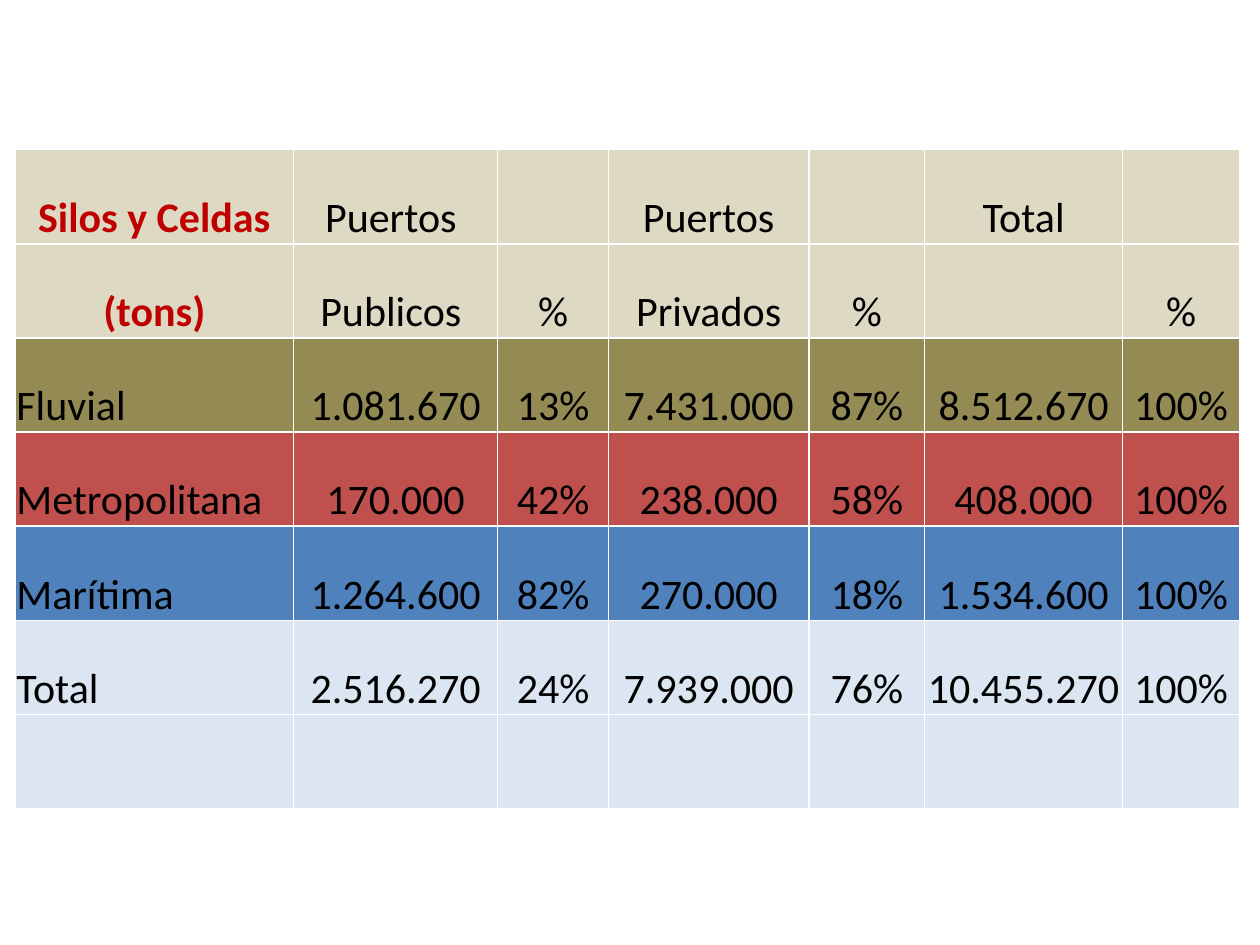
import pptx
import pptx.dml.color
import pptx.enum.text
import pptx.oxml
import pptx.oxml.ns
import pptx.util
from pptx.util import Inches

THEME = {
    "font": "Calibri",
    "size": pptx.util.Pt(24),
    "border_width": pptx.util.Pt(1),
    "white": "FFFFFF",
    "text": "000000",
    "accent": "C00000",
    "header": "DDD9C3",
    "river": "948A54",
    "metropolitan": "C0504D",
    "sea": "4F81BD",
    "total": "DCE6F2",
}
COLUMN_WIDTHS = [2.21, 1.62, 0.88, 1.59, 0.92, 1.57, 0.93]
ROW_HEIGHT = 0.7475
EMPTY_ROW = [""] * len(COLUMN_WIDTHS)
ROWS = [
    ("white", EMPTY_ROW),
    ("header", ["Silos y Celdas", "Puertos ", "", "Puertos", "", "Total", ""]),
    ("header", ["(tons)", "Publicos ", "%", "Privados", "%", "", "%"]),
    ("river", ["Fluvial", "1.081.670", "13%", "7.431.000", "87%", "8.512.670", "100%"]),
    ("metropolitan", ["Metropolitana", "170.000", "42%", "238.000", "58%", "408.000", "100%"]),
    ("sea", ["Marítima", "1.264.600", "82%", "270.000", "18%", "1.534.600", "100%"]),
    ("total", ["Total", "2.516.270", "24%", "7.939.000", "76%", "10.455.270", "100%"]),
    ("total", EMPTY_ROW),
]
CELL_FORMAT = {
    "vertical_anchor": pptx.enum.text.MSO_ANCHOR.BOTTOM,
    "margin_left": Inches(0.01),
    "margin_top": Inches(0.01),
    "margin_right": Inches(0.01),
    "margin_bottom": Inches(0),
}


def set_attributes(target, values):
    for name, value in values.items():
        setattr(target, name, value)


def add_borders(cell):
    properties = cell._tc.get_or_add_tcPr()
    for position, side in enumerate(["lnL", "lnR", "lnT", "lnB"]):
        line = pptx.oxml.parse_xml(
            f'<a:{side} {pptx.oxml.ns.nsdecls("a")} w="{THEME["border_width"]}">'
            f'<a:solidFill><a:srgbClr val="{THEME["white"]}"/></a:solidFill></a:{side}>'
        )
        properties.insert(position, line)


presentation = pptx.Presentation()
set_attributes(presentation, {"slide_width": Inches(10), "slide_height": Inches(7.5)})
slide = presentation.slides.add_slide(presentation.slide_layouts[6])

table = slide.shapes.add_table(
    len(ROWS), len(COLUMN_WIDTHS), Inches(0.12), Inches(0.44),
    Inches(sum(COLUMN_WIDTHS)), Inches(ROW_HEIGHT * len(ROWS)),
).table
set_attributes(table, {"first_row": False, "horz_banding": False})
for column, width in zip(table.columns, COLUMN_WIDTHS):
    column.width = Inches(width)

for row_index, (fill_name, texts) in enumerate(ROWS):
    table.rows[row_index].height = Inches(ROW_HEIGHT)
    for column_index, text in enumerate(texts):
        cell = table.cell(row_index, column_index)
        set_attributes(cell, CELL_FORMAT)
        cell.fill.solid()
        cell.fill.fore_color.rgb = pptx.dml.color.RGBColor.from_string(THEME[fill_name])
        add_borders(cell)
        if not text:
            continue
        is_label = column_index == 0
        is_heading = is_label and fill_name == "header"
        paragraph = cell.text_frame.paragraphs[0]
        if is_heading or not is_label:
            paragraph.alignment = pptx.enum.text.PP_ALIGN.CENTER
        run = paragraph.add_run()
        run.text = text
        set_attributes(run.font, {"name": THEME["font"], "size": THEME["size"], "bold": is_heading})
        run.font.color.rgb = pptx.dml.color.RGBColor.from_string(
            THEME["accent" if is_heading else "text"]
        )

presentation.save("out.pptx")
